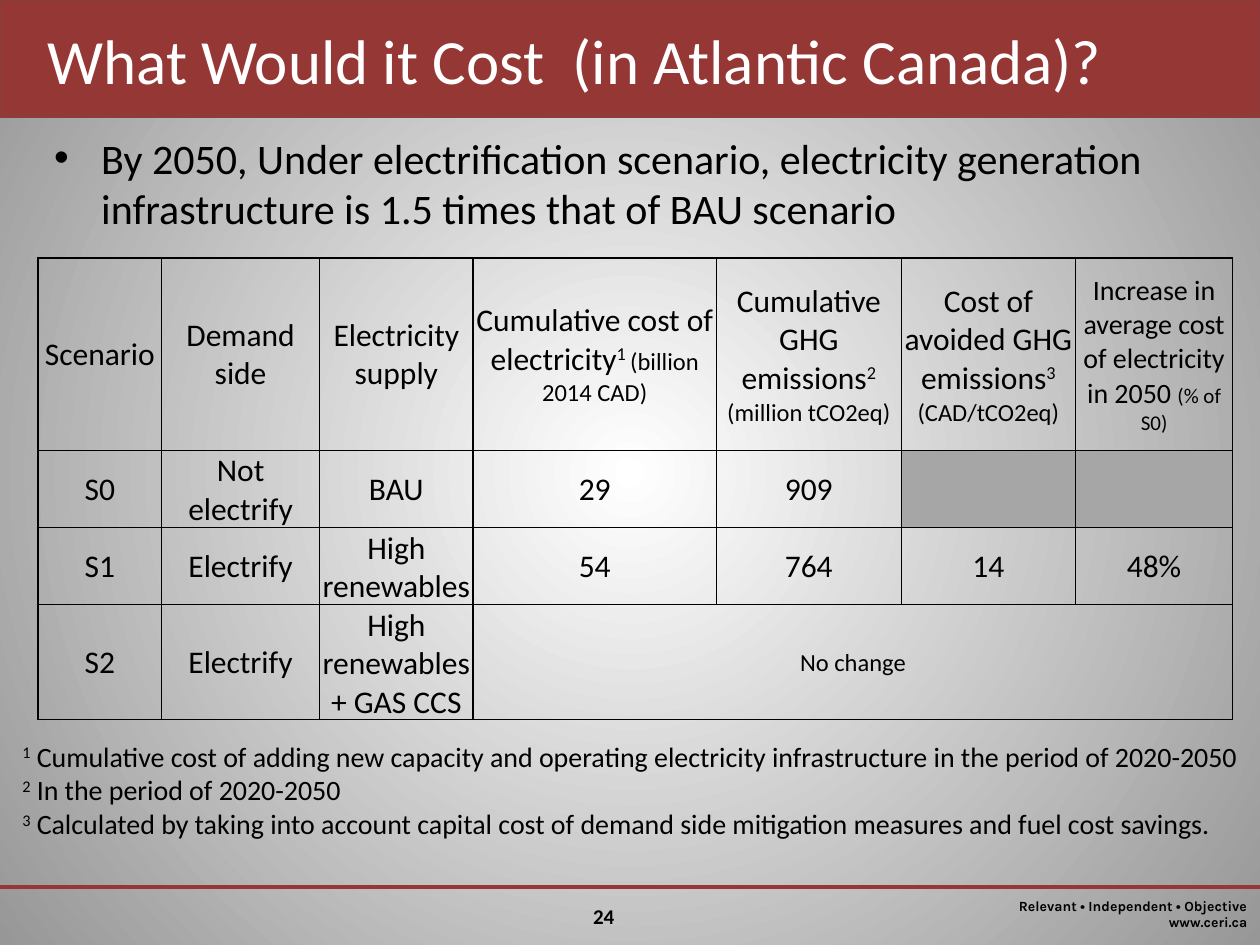
from lxml.etree import SubElement
from pptx import Presentation
from pptx.dml.color import RGBColor
from pptx.enum.shapes import MSO_CONNECTOR, MSO_SHAPE
from pptx.enum.text import MSO_ANCHOR, PP_ALIGN
from pptx.oxml.ns import qn
from pptx.util import Cm, Pt

COLORS = {"red": "953735", "edge": "8E3B39", "black": "000000",
          "white": "FFFFFF", "gray": "A6A6A6", "rim": "979797"}
WIDTHS = [2.49, 3.18, 3.1, 4.9, 3.73, 3.51, 3.17]
HEIGHTS = [3.88, 0.89, 0.89, 1.75]
# A cell is a list of runs; a run is (text, size) or (text, size, raised).
HEAD = [
    [("Scenario", 18)],
    [("Demand side", 18)],
    [("Electricity supply", 18)],
    [("Cumulative cost of electricity", 18), ("1 ", 18, True),
     ("(billion 2014 CAD)", 14)],
    [("Cumulative GHG emissions", 18), ("2 ", 18, True),
     ("(million tCO2eq)", 14)],
    [("Cost of avoided GHG emissions", 18), ("3 ", 18, True),
     ("(CAD/tCO2eq)", 14)],
    [("Increase in average cost of electricity in 2050 ", 16),
     ("(% of S0)", 12)],
]
BODY = [
    ["S0", "Not electrify", "BAU", "29", "909", None, None],
    ["S1", "Electrify", "High renewables", "54", "764", "14", "48%"],
    ["S2", "Electrify", "High renewables + GAS CCS"],
]
NOTES = [
    "Cumulative cost of adding new capacity and operating electricity "
    "infrastructure in the period of 2020-2050",
    "In the period of 2020-2050",
    "Calculated by taking into account capital cost of demand side "
    "mitigation measures and fuel cost savings.",
]


def tint(name):
    return RGBColor.from_string(COLORS[name])


class Deck:
    """Holds the text style and the slide being filled."""

    def __init__(self, slide, font="Calibri"):
        self.slide, self.font = slide, font

    def glow(self, inner, outer):
        """Fill the background with a gradient spreading from the centre."""
        fill = self.slide.background.fill
        fill.gradient()
        for stop, name, place in zip(fill.gradient_stops, (inner, outer), (0, 1)):
            stop.color.rgb = tint(name)
            stop.position = place
        grad = self.slide.element.find(".//" + qn("a:gradFill"))
        grad.remove(grad.find(qn("a:lin")))
        round_fill = SubElement(grad, qn("a:path"), {"path": "circle"})
        grad.find(qn("a:gsLst")).addnext(round_fill)
        SubElement(round_fill, qn("a:fillToRect"), dict.fromkeys("ltrb", "50000"))

    def bar(self, left, top, width, height):
        shape = self.slide.shapes.add_shape(
            MSO_SHAPE.RECTANGLE, Cm(left), Cm(top), Cm(width), Cm(height))
        shape.shadow.inherit = False
        shape.fill.solid()
        shape.fill.fore_color.rgb = tint("red")
        shape.line.color.rgb = tint("edge")
        shape.line.width = Pt(2)

    def rule(self, left, right, top):
        line = self.slide.shapes.add_connector(
            MSO_CONNECTOR.STRAIGHT, Cm(left), Cm(top), Cm(right), Cm(top))
        line.line.color.rgb = tint("red")
        line.line.width = Pt(2.25)
        SubElement(line._element.spPr, qn("a:effectLst"))

    def put(self, para, runs, color="black", bold=False, font=None):
        for text, size, *raised in runs:
            run = para.add_run()
            run.text = text
            run.font.size = Pt(size)
            run.font.name = font or self.font
            run.font.bold = bold
            run.font.color.rgb = tint(color)
            if raised:
                run._r.get_or_add_rPr().set("baseline", "30000")

    def text(self, left, top, width, height, paras, align=PP_ALIGN.LEFT,
             anchor=MSO_ANCHOR.TOP, wrap=True, **style):
        box = self.slide.shapes.add_textbox(
            Cm(left), Cm(top), Cm(width), Cm(height))
        frame = box.text_frame
        frame.word_wrap = wrap
        frame.vertical_anchor = anchor
        for i, runs in enumerate(paras):
            para = frame.add_paragraph() if i else frame.paragraphs[0]
            para.alignment = align
            self.put(para, runs, **style)
        return frame

    def bullet(self, para, indent):
        props = para._p.get_or_add_pPr()
        props.set("marL", str(Cm(indent)))
        props.set("indent", str(-Cm(indent)))
        SubElement(props, qn("a:buFont"), typeface="Arial")
        SubElement(props, qn("a:buChar"), char="•")

    def cell(self, cell, runs):
        props = cell._tc.get_or_add_tcPr()
        for side in ("lnL", "lnR", "lnT", "lnB"):
            line = SubElement(props, qn("a:" + side), w=str(Pt(1)))
            fill = SubElement(line, qn("a:solidFill"))
            SubElement(fill, qn("a:srgbClr"), val=COLORS["black"])
        cell.margin_left = cell.margin_right = cell.margin_top = Cm(0.03)
        cell.margin_bottom = 0
        cell.vertical_anchor = MSO_ANCHOR.MIDDLE
        if runs is None:
            cell.fill.solid()
            cell.fill.fore_color.rgb = tint("gray")
            return
        cell.fill.background()
        para = cell.text_frame.paragraphs[0]
        para.alignment = PP_ALIGN.CENTER
        self.put(para, runs)

    def table(self, left, top, widths, heights, rows):
        """Draw rows of cells; a short row's last cell spans what is left."""
        grid = self.slide.shapes.add_table(
            len(rows), len(widths), Cm(left), Cm(top),
            Cm(sum(widths)), Cm(sum(heights))).table
        grid.first_row = grid.horz_banding = False
        for col, width in zip(grid.columns, widths):
            col.width = Cm(width)
        for row, height in zip(grid.rows, heights):
            row.height = Cm(height)
        last = len(widths) - 1
        for r, row in enumerate(rows):
            end = len(row) - 1
            if end < last:
                grid.cell(r, end).merge(grid.cell(r, last))
            for c in range(last + 1):
                self.cell(grid.cell(r, c), row[c] if c <= end else [])


def main():
    show = Presentation()
    show.slide_width, show.slide_height = Cm(25.4), Cm(19.05)
    deck = Deck(show.slides.add_slide(show.slide_layouts[6]))
    deck.glow("white", "rim")
    deck.bar(0, 0, 25.4, 2.34)

    foot = deck.text(19.71, 17.96, 5.69, 0.94,
                     [[("Relevant • Independent • Objective", 8)]],
                     PP_ALIGN.RIGHT, wrap=False, bold=True, font="Karla")
    para = foot.paragraphs[0]
    para.add_line_break()
    deck.put(para, [("www.ceri.ca", 8)], bold=True, font="Karla")
    deck.rule(0, 25.4, 17.88)
    deck.text(10.8, 18.08, 2.74, 0.76, [[("24", 12)]],
              PP_ALIGN.CENTER, bold=True)

    deck.text(0.71, -0.08, 23.06, 2.54,
              [[("What Would it Cost  (in Atlantic Canada)?", 36)]],
              anchor=MSO_ANCHOR.MIDDLE, color="white")
    point = deck.text(0.84, 2.54, 22.86, 2.74, [[(
        "By 2050, Under electrification scenario, electricity generation "
        "infrastructure is 1.5 times that of BAU scenario", 24)]])
    deck.bullet(point.paragraphs[0], 0.95)

    body = [[text and [(text, 18)] for text in row] for row in BODY]
    body[-1].append([("No change", 14)])
    deck.table(0.77, 5.2, WIDTHS, HEIGHTS, [HEAD] + body)
    deck.text(0.2, 14.78, 25.2, 2.31,
              [[(str(i), 16, True), (" " + note, 16)]
               for i, note in enumerate(NOTES, 1)])
    show.save("out.pptx")


if __name__ == "__main__":
    main()
